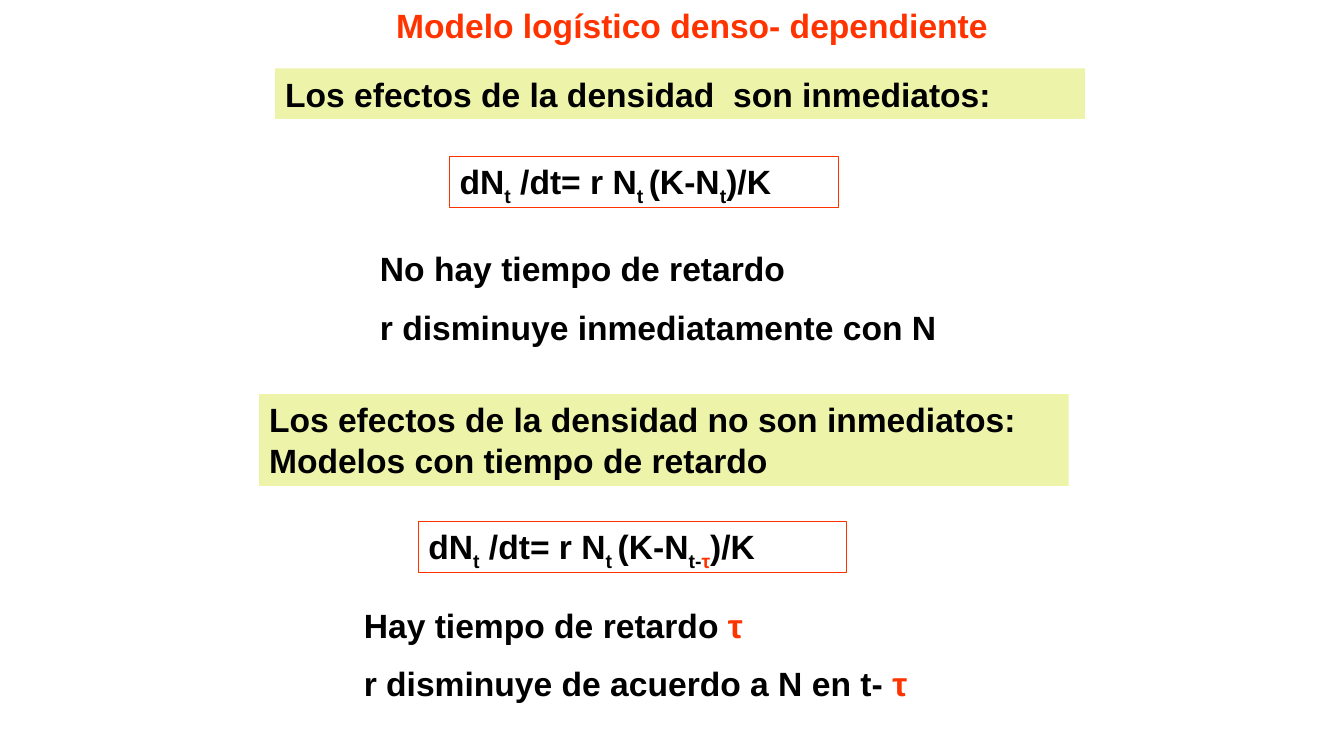
import dataclasses

import pptx
import pptx.dml.color
import pptx.enum.shapes
import pptx.enum.text
import pptx.util

Inches, Pt = pptx.util.Inches, pptx.util.Pt


@dataclasses.dataclass(frozen=True)
class Theme:
    font: str = "Arial"
    size: float = 24
    paragraph_gap: float = 13
    outline: float = 0.75
    ink: str = "000000"
    accent: str = "FF3300"
    band: str = "EDF4AA"
    paper: str = "FFFFFF"


THEME = Theme()
LINE_HEIGHT = 0.5
EQUATION_HEIGHT = 0.51
NOTES_HEIGHT = 1.11
NOTES_INSET = 0.94

# A run is (text, colour, is_subscript); a paragraph is a list of runs.


def plain(text, color=THEME.ink):
    return (text, color, False)


def sub(text, color=THEME.ink):
    return (text, color, True)


TAU = plain("τ", THEME.accent)
EQUATION_START = [plain("dN"), sub("t"), plain(" /dt= r N"), sub("t "), plain("(K-N")]


def rgb(value):
    return pptx.dml.color.RGBColor.from_string(value)


def write(frame, paragraphs):
    frame.word_wrap = True
    frame.vertical_anchor = pptx.enum.text.MSO_ANCHOR.TOP
    for index, runs in enumerate(paragraphs):
        paragraph = frame.add_paragraph() if index else frame.paragraphs[0]
        paragraph.alignment = pptx.enum.text.PP_ALIGN.LEFT
        paragraph.space_before = Pt(THEME.paragraph_gap if index else 0)
        for text, color, is_subscript in runs:
            run = paragraph.add_run()
            run.text = text
            style = {"name": THEME.font, "size": Pt(THEME.size), "bold": True}
            for attribute, value in style.items():
                setattr(run.font, attribute, value)
            run.font.color.rgb = rgb(color)
            if is_subscript:
                run._r.get_or_add_rPr().set("baseline", "-25000")


def add_panel(slide, box, paragraphs, fill=THEME.paper, outline=None):
    panel = slide.shapes.add_shape(
        pptx.enum.shapes.MSO_SHAPE.RECTANGLE, *map(Inches, box))
    panel.shadow.inherit = False
    panel.fill.solid()
    panel.fill.fore_color.rgb = rgb(fill)
    if outline:
        panel.line.color.rgb = rgb(outline)
        panel.line.width = Pt(THEME.outline)
    else:
        panel.line.fill.background()
    write(panel.text_frame, paragraphs)


def add_title(slide, box, text):
    title = slide.shapes.add_textbox(*map(Inches, box))
    write(title.text_frame, [[plain(text, THEME.accent)]])


def add_model(slide, box, heading, equation, notes, equation_span, notes_width, gaps):
    """Stack heading, equation and notes; box is that of the heading band."""
    left, top, _, height = box
    equation_inset, equation_width = equation_span
    equation_top = top + height + gaps[0]
    notes_top = equation_top + EQUATION_HEIGHT + gaps[1]
    add_panel(slide, box, [[plain(heading)]], fill=THEME.band)
    add_panel(slide, (left + equation_inset, equation_top, equation_width, EQUATION_HEIGHT),
              [equation], outline=THEME.accent)
    add_panel(slide, (left + NOTES_INSET, notes_top, notes_width, NOTES_HEIGHT), notes)


def main():
    deck = pptx.Presentation()
    deck.slide_width, deck.slide_height = Inches(13.33), Inches(7.5)
    slide = deck.slides.add_slide(deck.slide_layouts[6])

    add_model(
        slide, (2.73, 0.68, 8.03, LINE_HEIGHT),
        heading="Los efectos de la densidad  son inmediatos:",
        equation=EQUATION_START + [sub("t"), plain(")/K")],
        notes=[[plain("No hay tiempo de retardo")],
               [plain("r disminuye inmediatamente con N")]],
        equation_span=(1.73, 3.86), notes_width=6.14, gaps=(0.37, 0.35))
    add_model(
        slide, (2.57, 3.91, 8.03, 0.91),
        heading="Los efectos de la densidad no son inmediatos: Modelos con tiempo de retardo",
        equation=EQUATION_START + [sub("t-"), sub("τ", THEME.accent), plain(")/K")],
        notes=[[plain("Hay tiempo de retardo "), TAU],
               [plain("r disminuye de acuerdo a N en t- "), TAU]],
        equation_span=(1.58, 4.25), notes_width=6.08, gaps=(0.35, 0.27))
    add_title(slide, (3.83, 0, 6.3, LINE_HEIGHT), "Modelo logístico denso- dependiente")

    deck.save("out.pptx")


if __name__ == "__main__":
    main()
